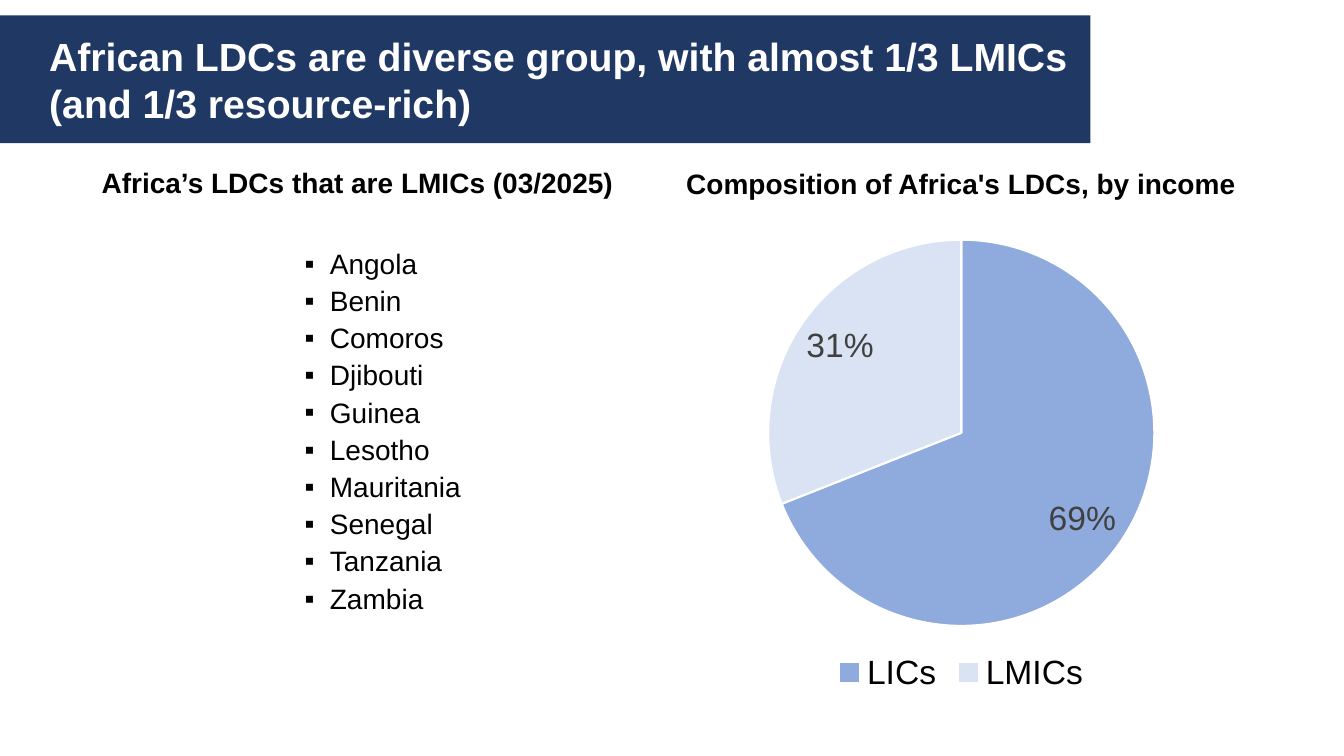
from lxml.etree import SubElement
from pptx import Presentation
from pptx.chart.data import CategoryChartData
from pptx.dml.color import RGBColor
from pptx.enum.chart import XL_CHART_TYPE, XL_LABEL_POSITION, XL_LEGEND_POSITION
from pptx.enum.text import MSO_ANCHOR, MSO_AUTO_SIZE, PP_ALIGN
from pptx.oxml.ns import qn
from pptx.util import Cm, Pt

HUES = {"navy": "203864", "white": "FFFFFF", "black": "000000",
        "blue": "8FAADC", "pale": "DAE3F3", "grey": "404040"}
LANDS = ["Angola", "Benin", "Comoros", "Djibouti", "Guinea",
         "Lesotho", "Mauritania", "Senegal", "Tanzania", "Zambia"]
PARTS = {"LICs": (69, "blue"), "LMICs": (31, "pale")}


def style(font, size, hue, bold=False):
    for key, val in {"name": "Arial", "size": Pt(size), "bold": bold}.items():
        setattr(font, key, val)
    font.color.rgb = RGBColor.from_string(HUES[hue])


def place(shape, left, top, width, height):
    box = {"left": left, "top": top, "width": width, "height": height}
    for key, val in box.items():
        setattr(shape, key, Cm(val))


deck = Presentation()
deck.slide_width, deck.slide_height = Cm(33.87), Cm(19.05)
slide = deck.slides.add_slide(deck.slide_layouts[1])

# Title on a rounded banner
title = slide.shapes.title
place(title, 0, 0.39, 27.48, 3.22)
geom = SubElement(title._element.spPr, qn("a:prstGeom"), prst="roundRect")
SubElement(geom, qn("a:avLst"))
title.fill.solid()
title.fill.fore_color.rgb = RGBColor.from_string(HUES["navy"])
frame = title.text_frame
look = {"vertical_anchor": MSO_ANCHOR.MIDDLE, "auto_size": MSO_AUTO_SIZE.NONE,
        "word_wrap": True, "margin_left": Cm(1.24), "margin_right": Cm(0.25),
        "margin_top": Cm(0.25), "margin_bottom": Cm(0.25)}
for key, val in look.items():
    setattr(frame, key, val)
frame.text = "African LDCs are diverse group, with almost 1/3 LMICs (and 1/3 resource-rich)"
frame.paragraphs[0].alignment = PP_ALIGN.LEFT
style(frame.paragraphs[0].runs[0].font, 28, "white", True)

# Left heading and country list
body = slide.placeholders[1]
place(body, 1.07, 4.14, 15.88, 14.2)
frame = body.text_frame
frame.auto_size = MSO_AUTO_SIZE.NONE
frame.text = "\n".join(["Africa’s LDCs that are LMICs (03/2025)"] + LANDS)
for i, para in enumerate(frame.paragraphs):
    head = i == 0
    para.line_spacing = 0.9
    para.space_before = Pt({0: 0, 1: 36}.get(i, 5))
    para.alignment = PP_ALIGN.CENTER if head else PP_ALIGN.LEFT
    props = para._p.get_or_add_pPr()
    props.set("marL", str(0 if head else Cm(6.99)))
    props.set("indent", str(0 if head else Cm(-0.64)))
    if head:
        SubElement(props, qn("a:buNone"))
    else:
        SubElement(props, qn("a:buFont"), typeface="Arial")
        SubElement(props, qn("a:buChar"), char="▪")
    style(para.runs[0].font, 20, "black", head)

# Right heading
label = slide.shapes.add_textbox(Cm(15.75), Cm(4.06), Cm(16.94), Cm(1.11))
frame = label.text_frame
frame.word_wrap = True
frame.text = "Composition of Africa's LDCs, by income"
frame.paragraphs[0].alignment = PP_ALIGN.CENTER
style(frame.paragraphs[0].runs[0].font, 20, "black", True)

# Pie by income group
data = CategoryChartData()
data.categories = list(PARTS)
data.add_series("Series 1", [share for share, hue in PARTS.values()])
chart = slide.shapes.add_chart(XL_CHART_TYPE.PIE, Cm(15.65), Cm(5.69),
                               Cm(17.15), Cm(11.91), data).chart
chart.has_title = False
style(chart.font, 18, "black")
chart.has_legend = True
chart.legend.position = XL_LEGEND_POSITION.BOTTOM
chart.legend.include_in_layout = False
style(chart.legend.font, 24, "black")

plot = chart.plots[0]
plot.vary_by_categories = True
for i, (share, hue) in enumerate(PARTS.values()):
    form = plot.series[0].points[i].format
    form.fill.solid()
    form.fill.fore_color.rgb = RGBColor.from_string(HUES[hue])
    form.line.color.rgb = RGBColor.from_string(HUES["white"])
    form.line.width = Pt(1.5)

plot.has_data_labels = True
tags = plot.data_labels
look = {"show_percentage": True, "show_value": False, "number_format": "0%",
        "number_format_is_linked": False, "position": XL_LABEL_POSITION.INSIDE_END}
for key, val in look.items():
    setattr(tags, key, val)
style(tags.font, 24, "grey")

deck.save("out.pptx")
